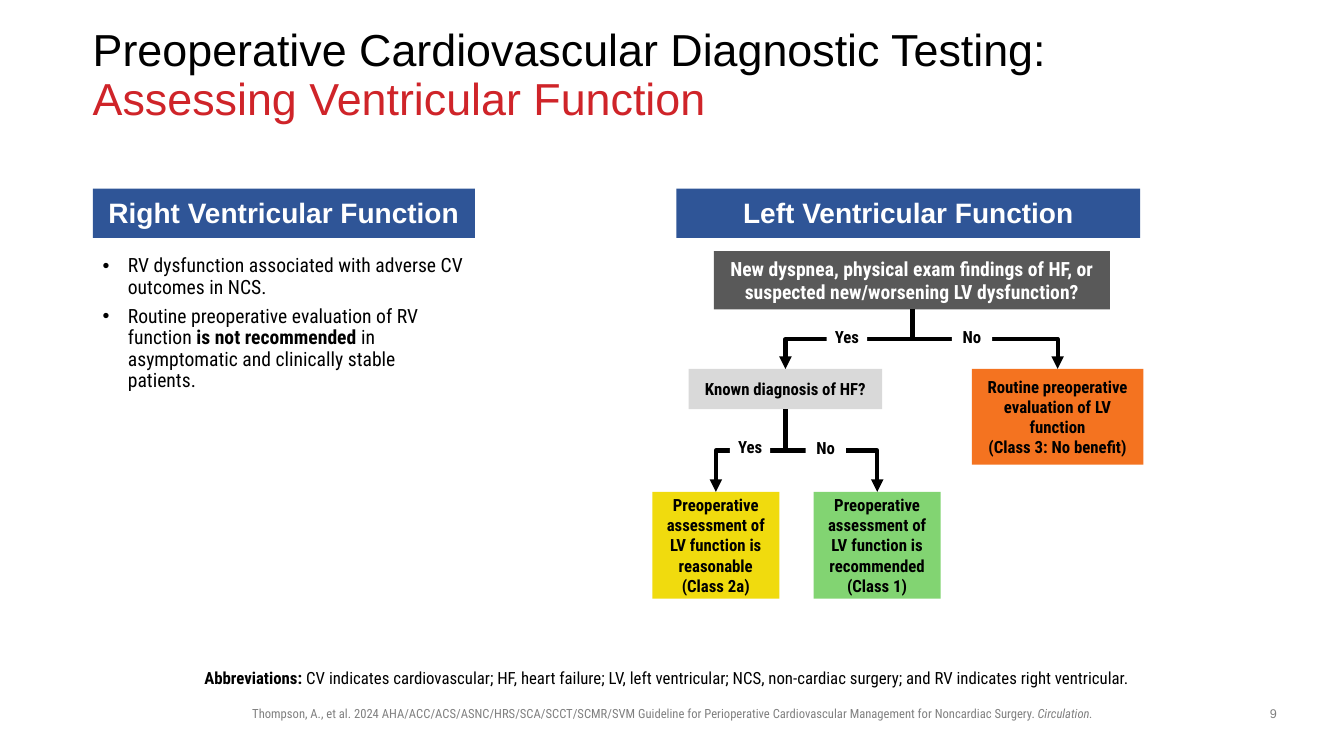
import pptx
import pptx.dml.color
import pptx.enum.shapes
import pptx.enum.text
import pptx.oxml
import pptx.oxml.ns
import pptx.util
from lxml import etree

Inches = pptx.util.Inches
Pt = pptx.util.Pt
ALIGN = pptx.enum.text.PP_ALIGN
ANCHOR = pptx.enum.text.MSO_ANCHOR
BODY_FONT = "Roboto Condensed"
COLORS = {
    "black": "000000", "white": "FFFFFF", "red": "CF2429", "blue": "2F5597",
    "dark": "595959", "light": "D9D9D9", "orange": "F47320", "yellow": "F0DB0E",
    "green": "82D472", "muted": "808080",
}
DEFAULT_INSETS = (0.1, 0.05, 0.1, 0.05)
NO_INSETS = (0, 0, 0, 0)


def rgb(name):
    """Return the palette colour with the given name."""
    return pptx.dml.color.RGBColor.from_string(COLORS[name])


def write(shape, paragraphs, size, color="black", font=BODY_FONT, bold=None,
          align=ALIGN.CENTER, anchor=ANCHOR.TOP, insets=DEFAULT_INSETS,
          spacing=None, after=None, bullet=None):
    """Fill a shape with paragraphs, each a list of (text, font overrides) runs."""
    frame = shape.text_frame
    frame.word_wrap = True
    frame.vertical_anchor = anchor
    frame.margin_left, frame.margin_top, frame.margin_right, frame.margin_bottom = map(Inches, insets)
    for index, runs in enumerate(paragraphs):
        paragraph = frame.add_paragraph() if index else frame.paragraphs[0]
        if bullet:
            properties = paragraph._p.get_or_add_pPr()
            properties.set("marL", str(Inches(0.25)))
            properties.set("indent", str(Inches(-0.25)))
            marker = etree.SubElement(properties, pptx.oxml.ns.qn("a:buFont"))
            marker.set("typeface", "Arial")
            marker = etree.SubElement(properties, pptx.oxml.ns.qn("a:buChar"))
            marker.set("char", bullet)
        paragraph.alignment = align
        if spacing:
            paragraph.line_spacing = spacing
        if after:
            paragraph.space_after = Pt(after)
        paragraph.font.name = font
        paragraph.font.size = Pt(size)
        paragraph.font.bold = bold
        paragraph.font.color.rgb = rgb(color)
        for text, overrides in runs:
            if text == "\n":
                paragraph.add_line_break()
                continue
            run = paragraph.add_run()
            run.text = text
            run.font.bold = overrides.get("bold")
            run.font.italic = overrides.get("italic")
            if "color" in overrides:
                run.font.color.rgb = rgb(overrides["color"])


def add_text(slide, box, paragraphs, size, **style):
    """Add a text box."""
    write(slide.shapes.add_textbox(*map(Inches, box)), paragraphs, size, **style)


def add_box(slide, box, fill, lines=(), size=12, **style):
    """Add a filled rectangle holding bold centred lines."""
    shape = slide.shapes.add_shape(pptx.enum.shapes.MSO_SHAPE.RECTANGLE, *map(Inches, box))
    shape.shadow.inherit = False
    shape.fill.solid()
    shape.fill.fore_color.rgb = rgb(fill)
    shape.line.fill.background()
    style = {"anchor": ANCHOR.MIDDLE, "bold": True, **style}
    write(shape, [[(line, {})] for line in lines], size, **style)


def add_branch(slide, start, end):
    """Add an elbow arrow that leaves downwards, crosses over and ends downwards."""
    (start_x, start_y), (end_x, end_y) = start, end
    half_drop, half_span = (end_y - start_y) / 2, abs(end_x - start_x) / 2
    center_x, center_y = (start_x + end_x) / 2, (start_y + end_y) / 2
    connector = slide.shapes.add_connector(
        pptx.enum.shapes.MSO_CONNECTOR.ELBOW,
        Inches(center_x - half_drop), Inches(center_y - half_span),
        Inches(center_x + half_drop), Inches(center_y + half_span))
    connector.line.color.rgb = rgb("black")
    connector.line.width = Pt(3)
    properties = connector._element.spPr
    transform = properties.find(pptx.oxml.ns.qn("a:xfrm"))
    goes_right = end_x > start_x
    transform.set("rot", str((270 if goes_right else 90) * 60000))
    if goes_right:
        transform.set("flipH", "1")
    head = etree.SubElement(connector.line._get_or_add_ln(), pptx.oxml.ns.qn("a:tailEnd"))
    head.set("type", "triangle")
    etree.SubElement(properties, pptx.oxml.ns.qn("a:effectLst"))


def add_header(slide, left, top, width, title):
    """Add a blue section header."""
    add_box(slide, (left, top, width, 0.49), "blue", [title], 20, color="white",
            font="Arial", insets=(0, 0.03, 0, 0), spacing=0.9)


def add_title(slide, box):
    """Add the two-line slide title."""
    runs = [("Preoperative Cardiovascular Diagnostic Testing:", {}), ("\n", {}),
            ("Assessing Ventricular Function", {"color": "red"})]
    add_text(slide, box, [runs], 32, font="Arial", align=ALIGN.LEFT,
             anchor=ANCHOR.MIDDLE, insets=NO_INSETS, spacing=0.9)


def add_right_ventricle(slide, left, top, width):
    """Add the right ventricular header and its bullets."""
    add_header(slide, left, top, width, "Right Ventricular Function")
    bullets = [
        [("RV dysfunction associated with adverse CV outcomes in NCS.", {})],
        [("Routine preoperative evaluation of RV function ", {}),
         ("is not recommended", {"bold": True}),
         (" in asymptomatic and clinically stable patients.", {})],
    ]
    add_text(slide, (left, top + 0.62, width, 1.46), bullets, 14,
             align=ALIGN.LEFT, spacing=0.9, after=6, bullet="•")


def add_left_ventricle(slide, left, top, width):
    """Add the left ventricular header and its decision tree."""
    add_header(slide, left, top, width, "Left Ventricular Function")
    root_top, middle_top, leaf_top = top + 0.62, top + 1.79, top + 3.01
    root = (left + 2.34, root_top + 0.58)
    known = (left + 1.08, middle_top + 0.4)
    add_box(slide, (left + 0.37, root_top, 3.93, 0.58), "dark",
            ["New dyspnea, physical exam findings of HF, or suspected new/worsening LV dysfunction?"],
            14, color="white")
    add_box(slide, (left + 2.93, middle_top, 1.7, 0.95), "orange",
            ["Routine preoperative evaluation of LV function", "(Class 3: No benefit)"])
    add_box(slide, (left + 0.12, middle_top, 1.92, 0.4), "light", ["Known diagnosis of HF?"])
    leaves = [(-0.24, "yellow", "reasonable", "(Class 2a)"),
              (1.36, "green", "recommended", "(Class 1)")]
    for offset, fill, verdict, grade in leaves:
        add_box(slide, (left + offset, leaf_top, 1.26, 1.06), fill,
                [f"Preoperative assessment of LV function is {verdict}", grade])
        add_branch(slide, known, (left + offset + 0.63, leaf_top))
    for offset in (1.08, 3.78):
        add_branch(slide, root, (left + offset, middle_top))
    labels = [(0.53, 2.46, "Yes"), (1.28, 2.47, "No"), (1.49, 1.37, "Yes"), (2.73, 1.37, "No")]
    for x, y, answer in labels:
        add_box(slide, (left + x, top + y, 0.4, 0.2), "white", [answer],
                anchor=ANCHOR.TOP, insets=NO_INSETS)


def add_footer(slide, top):
    """Add the abbreviations, the citation and the page number."""
    abbreviations = [
        ("Abbreviations: ", {"bold": True}),
        ("CV indicates cardiovascular; HF, heart failure; LV, left ventricular; "
         "NCS, non-cardiac surgery; and RV indicates right ventricular.", {})]
    citation = [
        ("Thompson, A., et al. 2024 AHA/ACC/ACS/ASNC/HRS/SCA/SCCT/SCMR/SVM Guideline for "
         "Perioperative Cardiovascular Management for Noncardiac Surgery. ", {}),
        ("Circulation.", {"italic": True})]
    add_text(slide, (1.88, top, 9.57, 0.46), [abbreviations], 12, anchor=ANCHOR.BOTTOM,
             insets=(0, 0.05, 0.1, 0.05), spacing=0.9)
    add_text(slide, (2.36, top + 0.53, 8.62, 0.25), [citation], 9, color="muted")
    add_text(slide, (12.42, top + 0.53, 0.42, 0.26), [[("9", {})]], 9, color="muted", font="Arial")


def main():
    """Build and save the slide."""
    presentation = pptx.Presentation()
    presentation.slide_width = Inches(13.33)
    presentation.slide_height = Inches(7.5)
    slide = presentation.slides.add_slide(presentation.slide_layouts[6])
    add_title(slide, (0.92, 0.4, 11.5, 0.72))
    add_right_ventricle(slide, 0.92, 1.87, 3.79)
    add_left_ventricle(slide, 6.71, 1.87, 4.6)
    add_footer(slide, 6.42)
    presentation.save("out.pptx")


if __name__ == "__main__":
    main()
